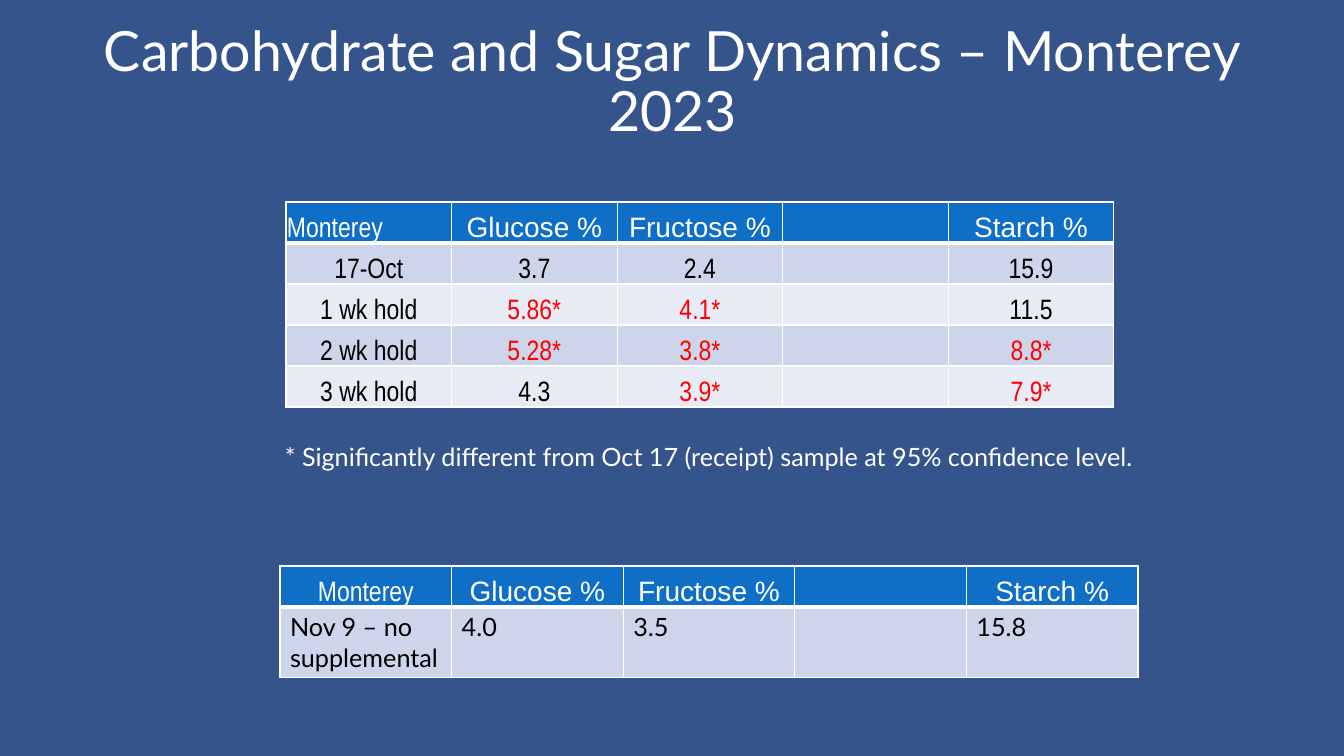
from dataclasses import dataclass

import pptx
import pptx.dml.color
import pptx.enum.text
import pptx.oxml
import pptx.oxml.ns
import pptx.util

ALIGN = pptx.enum.text.PP_ALIGN
ANCHOR = pptx.enum.text.MSO_ANCHOR

TITLE = "Carbohydrate and Sugar Dynamics – Monterey\v2023"
HEADER = ["Monterey", "Glucose %", "Fructose %", "", "Starch %"]
HOLD_ROWS = [
    HEADER,
    ["17-Oct", "3.7", "2.4", "", "15.9"],
    ["1 wk hold", "5.86*", "4.1*", "", "11.5"],
    ["2 wk hold", "5.28*", "3.8*", "", "8.8*"],
    ["3 wk hold", "4.3", "3.9*", "", "7.9*"],
]
NOVEMBER_ROWS = [
    HEADER,
    ["Nov 9 – no supplemental", "4.0", "3.5", "", "15.8"],
]
FOOTNOTE = "* Significantly different from Oct 17 (receipt) sample at 95% confidence level."


@dataclass(frozen=True)
class Theme:
    background: str = "36548C"
    header: str = "0F6FC6"
    bands: tuple = ("CCD5EA", "E7EBF5")
    light: str = "FFFFFF"
    dark: str = "000000"
    significant: str = "FF0000"
    text_font: str = "Lato"
    heading_font: str = "Arial"
    data_font: str = "Arial Narrow"
    title_size: float = 39.6
    table_size: int = 20
    body_size: int = 18
    thin: int = 1
    thick: int = 3


THEME = Theme()


def px(length):
    return round(length * 914400 / 100.8)


def rgb(value):
    return pptx.dml.color.RGBColor.from_string(value)


def style(para, font, size, color, align=ALIGN.LEFT):
    para.alignment = align
    para.font.name = font
    para.font.size = pptx.util.Pt(size)
    para.font.color.rgb = rgb(color)


def set_borders(cell, top, bottom):
    """Draw light borders; top and bottom are widths in points."""
    widths = {"L": THEME.thin, "R": THEME.thin, "T": top, "B": bottom}
    properties = cell._tc.get_or_add_tcPr()
    for index, (side, width) in enumerate(widths.items()):
        properties.insert(index, pptx.oxml.parse_xml(
            f'<a:ln{side} {pptx.oxml.ns.nsdecls("a")} w="{pptx.util.Pt(width)}">'
            f'<a:solidFill><a:srgbClr val="{THEME.light}"/></a:solidFill></a:ln{side}>'))


def set_tight(cell):
    """Stand the text on the bottom edge with almost no margins."""
    cell.vertical_anchor = ANCHOR.BOTTOM
    cell.margin_left = cell.margin_right = cell.margin_top = px(1)
    cell.margin_bottom = 0


def add_sugar_table(page, rows, left, top, width, heights):
    frame = page.shapes.add_table(len(rows), len(HEADER), px(left), px(top),
                                  px(width), px(sum(heights)))
    table = frame.table
    table.first_row = table.horz_banding = False
    for column in table.columns:
        column.width = px(width / len(HEADER))
    for r, (values, height) in enumerate(zip(rows, heights)):
        table.rows[r].height = px(height)
        for c, value in enumerate(values):
            cell = table.cell(r, c)
            cell.text = value
            cell.fill.solid()
            cell.fill.fore_color.rgb = rgb(THEME.bands[(r - 1) % 2] if r else THEME.header)
            set_borders(cell, THEME.thick if r == 1 else THEME.thin,
                        THEME.thin if r else THEME.thick)
            para = cell.text_frame.paragraphs[0]
            if r == 0:
                set_tight(cell)
                font = THEME.heading_font if c else THEME.data_font
                style(para, font, THEME.table_size, THEME.light, ALIGN.CENTER)
            elif rows is HOLD_ROWS:
                set_tight(cell)
                color = THEME.significant if value.endswith("*") else THEME.dark
                style(para, THEME.data_font, THEME.table_size, color, ALIGN.CENTER)
            else:
                style(para, THEME.text_font, THEME.body_size, THEME.dark)
    return table


def add_title(page):
    title = page.shapes.title
    title.left, title.top, title.width, title.height = px(93), px(40), px(1159), px(146)
    frame = title.text_frame
    frame.text = TITLE
    frame.word_wrap = True
    frame.auto_size = pptx.enum.text.MSO_AUTO_SIZE.NONE
    frame.vertical_anchor = ANCHOR.MIDDLE
    frame.margin_bottom = px(64)
    para = frame.paragraphs[0]
    para.line_spacing = 0.9
    style(para, THEME.text_font, THEME.title_size, THEME.light, ALIGN.CENTER)


def add_footnote(page):
    box = page.shapes.add_textbox(px(275), px(436), px(1050), px(40))
    box.text_frame.word_wrap = True
    box.text_frame.text = FOOTNOTE
    style(box.text_frame.paragraphs[0], THEME.text_font, THEME.body_size, THEME.light)


def main():
    deck = pptx.Presentation()
    deck.slide_width, deck.slide_height = px(1344), px(756)
    page = deck.slides.add_slide(deck.slide_layouts[5])
    page.background.fill.solid()
    page.background.fill.fore_color.rgb = rgb(THEME.background)
    add_title(page)
    hold = add_sugar_table(page, HOLD_ROWS, 286, 202, 828, [41] * len(HOLD_ROWS))
    hold.cell(0, 0).text_frame.paragraphs[0].alignment = ALIGN.LEFT
    add_footnote(page)
    add_sugar_table(page, NOVEMBER_ROWS, 280, 566, 858, [41, 70])
    deck.save("out.pptx")


if __name__ == "__main__":
    main()
